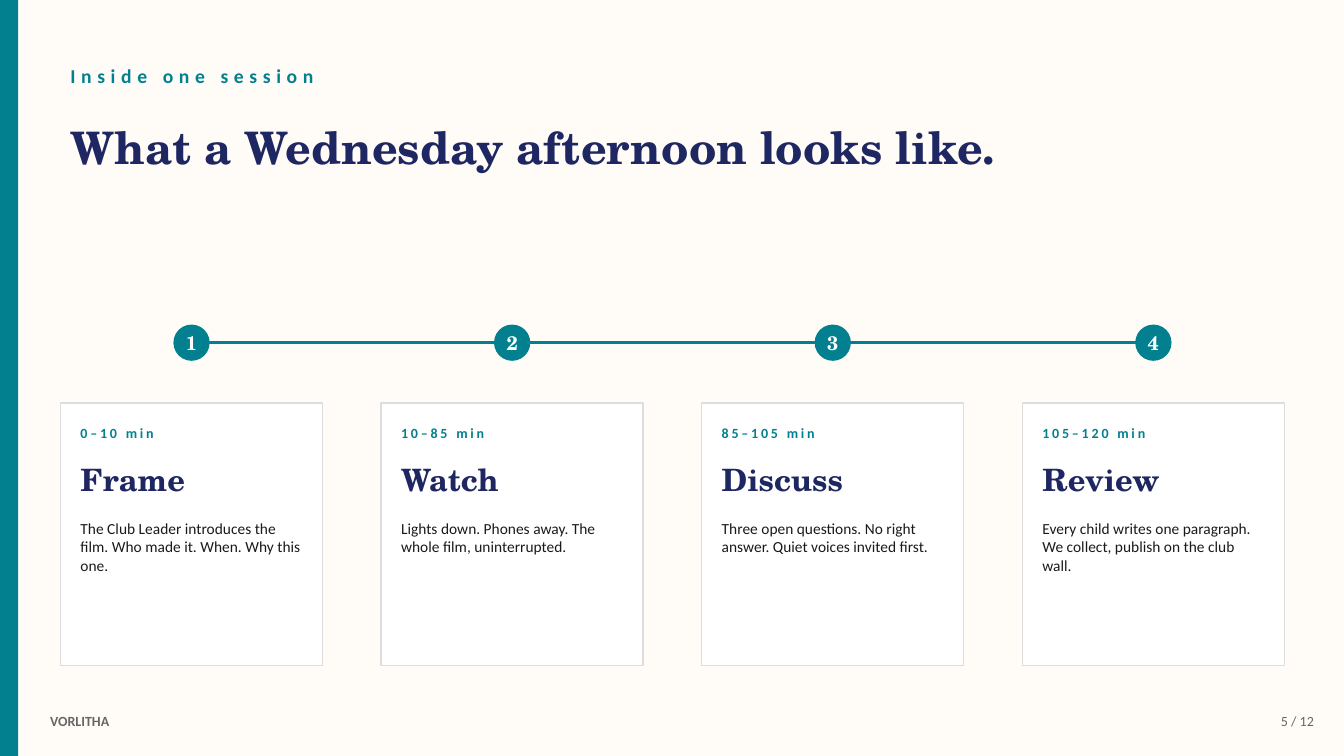
from pptx import Presentation
from pptx.dml.color import RGBColor
from pptx.enum.shapes import MSO_CONNECTOR, MSO_SHAPE
from pptx.enum.text import MSO_ANCHOR, MSO_AUTO_SIZE, PP_ALIGN
from pptx.oxml.ns import qn
from pptx.util import Emu, Pt
from lxml.etree import SubElement

PX = 9144
TEAL, NAVY, INK, GREY = "028090", "1E2761", "1A1A1A", "666666"
SERIF, SANS = "TeX Gyre Schola", "Calibri"
STEPS = [
    ("0–10 min", "Frame", "The Club Leader introduces the film. Who made it. When. Why this one."),
    ("10–85 min", "Watch", "Lights down. Phones away. The whole film, uninterrupted."),
    ("85–105 min", "Discuss", "Three open questions. No right answer. Quiet voices invited first."),
    ("105–120 min", "Review", "Every child writes one paragraph. We collect, publish on the club wall."),
]


def px(n):
    """Turn whole px into EMU."""
    return Emu(n * PX)


def rgb(value):
    """Turn a hex string into a colour."""
    return RGBColor.from_string(value)


def write(sp, text, color, font, align=PP_ALIGN.LEFT, anchor=MSO_ANCHOR.MIDDLE, spacing=0):
    """Fill a shape with one formatted paragraph."""
    tf = sp.text_frame
    frame = {"word_wrap": True, "auto_size": MSO_AUTO_SIZE.NONE, "vertical_anchor": anchor}
    for name, value in frame.items():
        setattr(tf, name, value)
    p = tf.paragraphs[0]
    p.alignment = align
    r = p.add_run()
    r.text = text
    for name, value in font.items():
        setattr(r.font, name, value)
    r.font.color.rgb = rgb(color)
    if spacing:
        r.font._element.set("spc", str(spacing * 100))


def add_text(s, box, text, color, font, **layout):
    """Add a text box at the given px box."""
    write(s.shapes.add_textbox(*map(px, box)), text, color, font, **layout)


def add_block(s, kind, box, fill, line=None):
    """Add a flat preset shape at the given px box."""
    sp = s.shapes.add_shape(kind, *map(px, box))
    sp.shadow.inherit = False
    sp.fill.solid()
    sp.fill.fore_color.rgb = rgb(fill)
    if line:
        sp.line.color.rgb = rgb(line)
        sp.line.width = Pt(1)
    else:
        sp.line.fill.background()
    return sp


def add_header(s, x, y, w):
    """Place the kicker and the slide title."""
    add_text(s, (x, y, 600, 50), "Inside one session", TEAL,
             {"name": SANS, "size": Pt(14), "bold": True}, spacing=4)
    title = s.shapes.title
    place = {"left": x, "top": y + 50, "width": w, "height": 90}
    for name, value in place.items():
        setattr(title, name, px(value))
    write(title, "What a Wednesday afternoon looks like.", NAVY,
          {"name": SERIF, "size": Pt(32), "bold": True})


def add_marker(s, cx, cy, number):
    """Place a numbered dot around its centre."""
    size = 36
    sp = add_block(s, MSO_SHAPE.OVAL, (cx - size // 2, cy - size // 2, size, size), TEAL)
    for side in ("left", "top", "right", "bottom"):
        setattr(sp.text_frame, f"margin_{side}", 0)
    write(sp, str(number), "FFFFFF", {"name": SERIF, "size": Pt(14), "bold": True},
          align=PP_ALIGN.CENTER)


def add_card(s, x, y, size, step):
    """Place one step card with its time, name and description."""
    time, name, detail = step
    left, w = x + 10, size - 20
    add_block(s, MSO_SHAPE.RECTANGLE, (x, y, size, size), "FFFFFF", "DDDDDD")
    add_text(s, (left, y + 10, w, 40), time, TEAL,
             {"name": SANS, "size": Pt(10), "bold": True}, spacing=2)
    add_text(s, (left, y + 50, w, 50), name, NAVY,
             {"name": SERIF, "size": Pt(22), "bold": True})
    add_text(s, (left, y + 110, w, 150), detail, INK,
             {"name": SANS, "size": Pt(11)}, anchor=MSO_ANCHOR.TOP)


def add_timeline(s, x, y, size, step):
    """Place the line, its markers and the cards below."""
    centres = [x + size // 2 + i * step for i in range(len(STEPS))]
    line = s.shapes.add_connector(MSO_CONNECTOR.STRAIGHT,
                                  *map(px, (centres[0], y, centres[-1], y)))
    line.line.color.rgb = rgb(TEAL)
    line.line.width = Pt(2)
    SubElement(line._element.spPr, qn("a:effectLst"))
    for i, (cx, item) in enumerate(zip(centres, STEPS), 1):
        add_marker(s, cx, y, i)
        add_card(s, cx - size // 2, y + 60, size, item)


def add_footer(s, left, right, y):
    """Place the footer name and the page number."""
    font = {"name": SANS, "size": Pt(10)}
    add_text(s, (right - 100, y, 100, 30), "5 / 12", GREY, font, align=PP_ALIGN.RIGHT)
    add_text(s, (left, y, 200, 30), "VORLITHA", GREY, {**font, "bold": True})


def main():
    """Build and save the session slide."""
    prs = Presentation()
    prs.slide_width, prs.slide_height = px(1333), px(750)
    s = prs.slides.add_slide(prs.slide_layouts[5])
    s.background.fill.solid()
    s.background.fill.fore_color.rgb = rgb("FFFCF7")
    add_block(s, MSO_SHAPE.RECTANGLE, (0, 0, 18, 750), TEAL)
    add_header(s, 60, 50, 1200)
    add_timeline(s, 60, 340, 260, 318)
    add_footer(s, 40, 1313, 700)
    prs.save("out.pptx")


if __name__ == "__main__":
    main()
